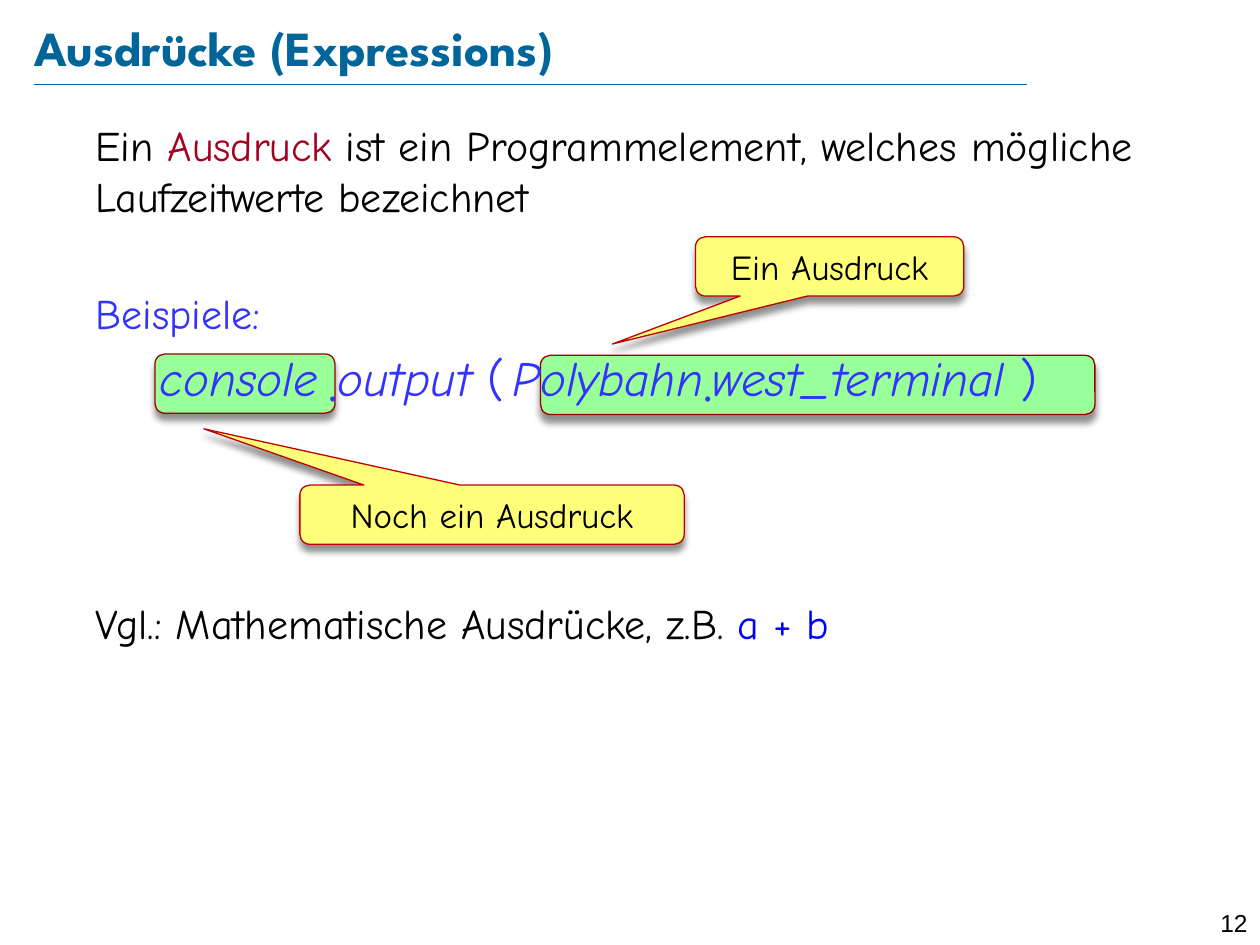
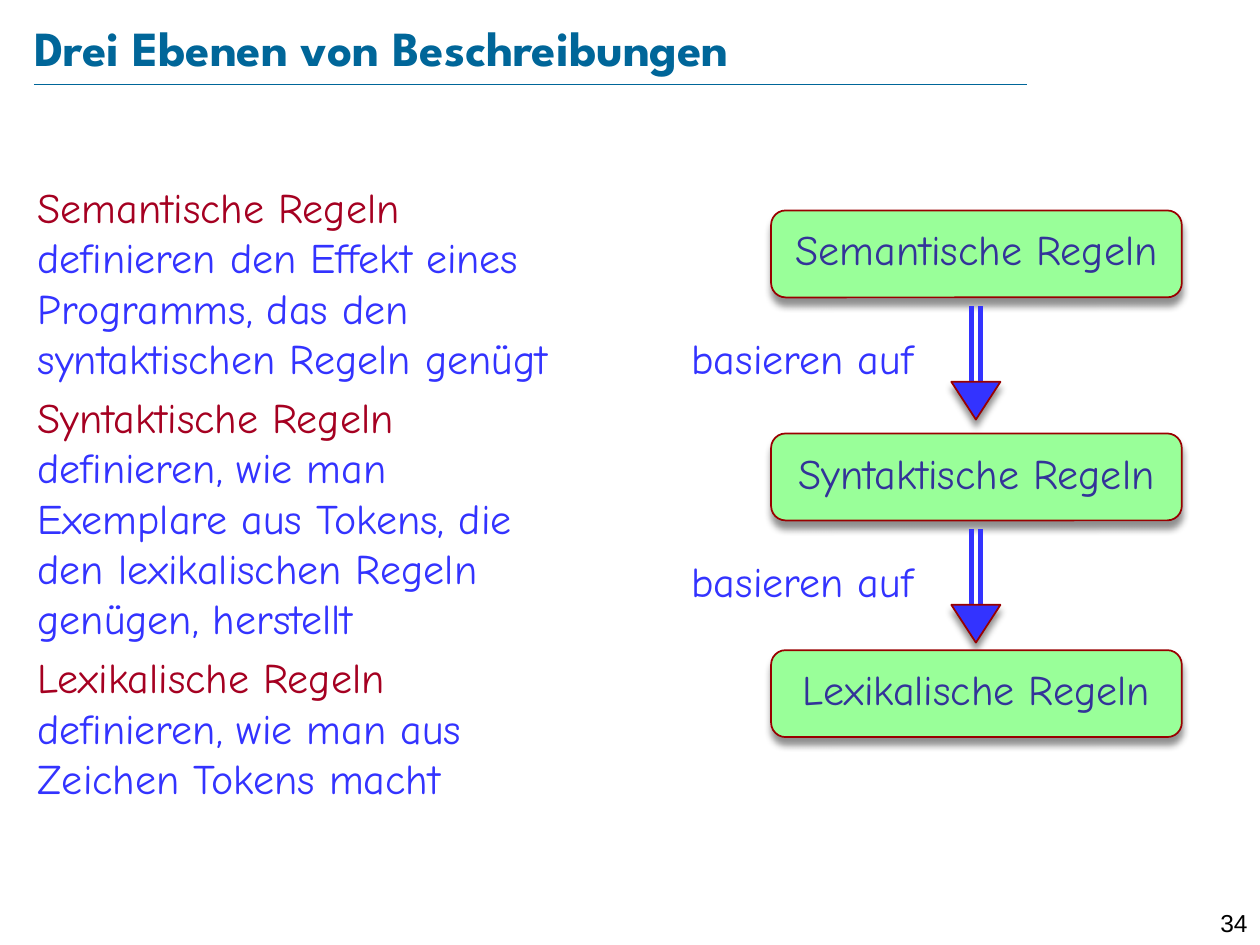
from pptx import Presentation
from pptx.dml.color import RGBColor
from pptx.enum.shapes import MSO_CONNECTOR as CONN, MSO_SHAPE as SHAPE
from pptx.enum.text import MSO_ANCHOR as ANCHOR, PP_ALIGN as ALIGN
from pptx.oxml import parse_xml
from pptx.oxml.ns import nsdecls, qn
from pptx.util import Inches, Pt

COLORS = {
    "title": "006699", "black": "000000", "term": "A50021", "blue": "3333FF",
    "formula": "0000FF", "level": "333399", "green": "99FF99",
    "yellow": "FFFF79", "border": "990000", "callout_border": "C00000",
}
BODY_FONT, TITLE_FONT, NUMBER_FONT = "Comic Neue", "League Spartan", "Arial"


def rgb(name):
    return RGBColor.from_string(COLORS[name])


def style(font, size, color, name=BODY_FONT, bold=None):
    font.size, font.name, font.bold = Pt(size), name, bold
    font.color.rgb = rgb(color)


def add_textbox(slide, x, y, w, h, wrap=True):
    tf = slide.shapes.add_textbox(
        Inches(x), Inches(y), Inches(w), Inches(h)).text_frame
    tf.word_wrap = wrap
    return tf


def set_margins(tf, side, top):
    tf.margin_left = tf.margin_right = Inches(side)
    tf.margin_top = tf.margin_bottom = Inches(top)


def add_runs(p, runs, size=24, color="blue"):
    """Fill a paragraph with (text, colour) runs."""
    style(p.font, size, color)
    for text, run_color in runs:
        r = p.add_run()
        r.text = text
        if run_color != color:
            r.font.color.rgb = rgb(run_color)


def add_line(slide, x1, y1, x2, y2, color, width):
    line = slide.shapes.add_connector(
        CONN.STRAIGHT, Inches(x1), Inches(y1), Inches(x2), Inches(y2))
    line.line.color.rgb = rgb(color)
    line.line.width = Pt(width)
    line._element.spPr.append(parse_xml(f"<a:effectLst {nsdecls('a')}/>"))


def add_shadowed(slide, kind, x, y, w, h, fill, border="border", width=0.75):
    sp = slide.shapes.add_shape(kind, Inches(x), Inches(y), Inches(w), Inches(h))
    sp.fill.solid()
    sp.fill.fore_color.rgb = rgb(fill)
    sp.line.color.rgb = rgb(border)
    sp.line.width = Pt(width)
    sp.shadow.inherit = False
    sp._element.spPr.find(qn("a:effectLst")).append(parse_xml(
        f'<a:outerShdw {nsdecls("a")} blurRad="{Pt(4)}" dist="{Pt(4)}" '
        'dir="5400000" rotWithShape="0"><a:srgbClr val="000000">'
        '<a:alpha val="43000"/></a:srgbClr></a:outerShdw>'))
    return sp


def set_label(sp, text, size, color):
    tf = sp.text_frame
    tf.word_wrap = True
    tf.vertical_anchor = ANCHOR.MIDDLE
    p = tf.paragraphs[0]
    p.text, p.alignment = text, ALIGN.CENTER
    style(p.font, size, color)
    return p


def add_callout(slide, text, x, y, w, tip):
    sp = add_shadowed(slide, SHAPE.ROUNDED_RECTANGULAR_CALLOUT, x, y, w, 0.47,
                      "yellow", "callout_border")
    sp.adjustments[0], sp.adjustments[1] = tip
    set_label(sp, text, 20, "black")


def add_level(slide, text, y):
    sp = add_shadowed(slide, SHAPE.ROUNDED_RECTANGLE, 6.12, y, 3.26, 0.69,
                      "green", width=1)
    set_margins(sp.text_frame, 0, 0.05)
    set_label(sp, text, 24, "level").line_spacing = 0.8


def add_based_on(slide, y):
    """Double-shafted arrow with its caption, starting at height y."""
    tf = add_textbox(slide, 5.39, y + 0.16, 2.16, 0.51, wrap=False)
    add_runs(tf.paragraphs[0], [("basieren auf", "blue")])
    for x in (7.71, 7.78):
        add_line(slide, x, y, x, y + 0.76, "blue", 3)
    head = add_shadowed(slide, SHAPE.ISOSCELES_TRIANGLE, 7.55, y + 0.6,
                        0.39, 0.3, "blue", width=1)
    head.rotation = 180


def add_code(p):
    """Feature call with raised-size dots set below the baseline."""
    p._p.get_or_add_pPr().set("marL", str(Inches(0.51)))
    style(p.font, 28, "blue")
    parts = [("console", 28, True), (" ", 18, True), ("•", 28, False),
             ("output ", 28, True), ("(", 28, False), (" ", 14, False),
             ("Polybahn", 28, True), ("•", 28, False),
             ("west_terminal ", 28, True), (")", 28, False)]
    for text, size, italic in parts:
        r = p.add_run()
        r.text = text
        r.font.size, r.font.italic = Pt(size), italic
        if text == "•":
            r.font._element.set("baseline", "-20000")


def new_slide(prs, title, number):
    slide = prs.slides.add_slide(prs.slide_layouts[6])
    add_line(slide, 0.27, 0.67, 8.15, 0.67, "title", 0.25)
    # Page number
    p = add_textbox(slide, 9.45, 7.16, 0.55, 0.24).paragraphs[0]
    p.text, p.alignment = str(number), ALIGN.RIGHT
    style(p.font, 14, "black", NUMBER_FONT)
    # Title
    tf = add_textbox(slide, 0.27, 0.13, 8.69, 0.48)
    set_margins(tf, 0, 0)
    tf.vertical_anchor = ANCHOR.MIDDLE
    tf.paragraphs[0].text = title
    style(tf.paragraphs[0].font, 28, "title", TITLE_FONT, bold=True)
    return slide


def build_expressions(prs):
    slide = new_slide(prs, "Ausdrücke (Expressions)", 12)
    # Highlights behind the code line
    for x, y, w in ((1.23, 2.81, 1.43), (4.29, 2.82, 4.4)):
        add_shadowed(slide, SHAPE.ROUNDED_RECTANGLE, x, y, w, 0.47, "green")
    # Definition, example and comparison
    tf = add_textbox(slide, 0.66, 0.9, 8.72, 5.45)
    add_runs(tf.paragraphs[0], [
        ("Ein ", "black"), ("Ausdruck", "term"),
        (" ist ein Programmelement, welches mögliche "
         "Laufzeitwerte bezeichnet", "black")], color="black")
    example, code, comparison = (tf.add_paragraph() for _ in range(3))
    example.space_before, code.space_before = Pt(38.4), Pt(5.6)
    comparison.space_before = Pt(106)
    add_runs(example, [("Beispiele:", "blue")])
    add_code(code)
    add_runs(comparison, [
        ("Vgl.: Mathematische Ausdrücke, z.B. ", "black"),
        ("a + b", "formula")], color="black")
    # Callouts
    add_callout(slide, "Noch ein Ausdruck", 2.38, 3.85, 3.05, (-0.75, -1.45))
    add_callout(slide, "Ein Ausdruck", 5.52, 1.88, 2.13, (-0.81, 1.31))


def build_levels(prs):
    slide = new_slide(prs, "Drei Ebenen von Beschreibungen", 34)
    levels = [
        ("Semantische Regeln", 1.67, "definieren den Effekt eines Programms, "
         "das den syntaktischen Regeln genügt"),
        ("Syntaktische Regeln", 3.44, "definieren, wie man Exemplare aus "
         "Tokens, die den lexikalischen Regeln genügen, herstellt"),
        ("Lexikalische Regeln", 5.16,
         "definieren, wie man aus Zeichen Tokens macht"),
    ]
    tf = add_textbox(slide, 0.2, 1.39, 4.5, 5.59)
    for i, (name, y, meaning) in enumerate(levels):
        # Explanation on the left
        p = tf.add_paragraph() if i else tf.paragraphs[0]
        if i:
            p.space_before = Pt(4.8)
        add_runs(p, [(name + " ", "term"), (meaning, "blue")])
        # Box on the right, with an arrow down to the next one
        add_level(slide, name, y)
        if i < len(levels) - 1:
            add_based_on(slide, y + 0.76)


def main():
    prs = Presentation()
    prs.slide_width, prs.slide_height = Inches(10), Inches(7.5)
    build_expressions(prs)
    build_levels(prs)
    prs.save("out.pptx")


if __name__ == "__main__":
    main()
